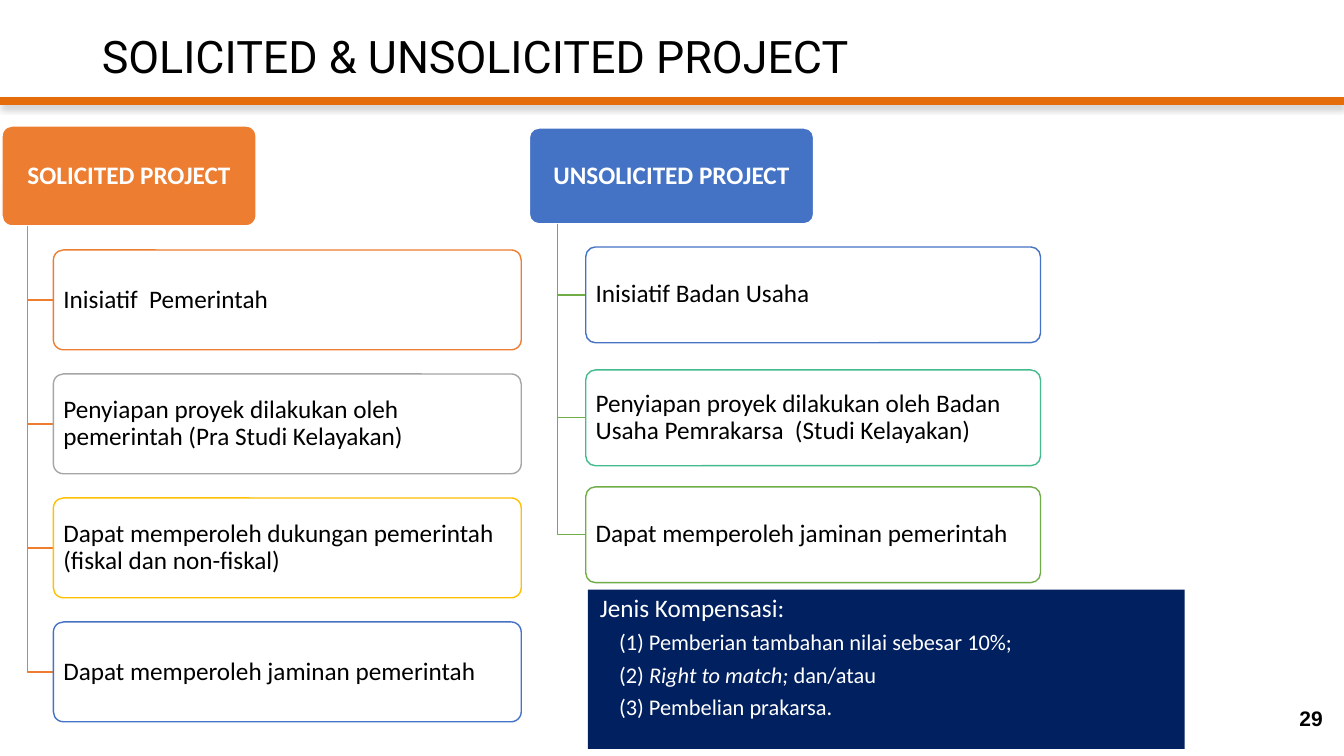
import pptx
import pptx.util
import pptx.dml.color
import pptx.enum.shapes
import pptx.enum.text
import pptx.oxml
import pptx.oxml.ns
from pptx.util import Inches

COLORS = {
    "black": "000000", "white": "FFFFFF", "rule": "E46C0A", "navy": "002060",
    "orange": "ED7D31", "gray": "A5A5A5", "gold": "FFC000", "blue": "4472C4",
    "teal": "43BB8D", "green": "70AD47",
}
SHAPES = pptx.enum.shapes.MSO_SHAPE
ALIGN = pptx.enum.text.PP_ALIGN
ANCHOR = pptx.enum.text.MSO_ANCHOR
NS = pptx.oxml.ns.nsdecls("a")
SHADOW = (
    f'<a:effectLst {NS}><a:outerShdw blurRad="{pptx.util.Pt(4)}" dist="{pptx.util.Pt(3)}" '
    'dir="5400000" rotWithShape="0"><a:srgbClr val="808080"><a:alpha val="40000"/>'
    '</a:srgbClr></a:outerShdw></a:effectLst>'
)


class Deck:
    def __init__(self, prs, font="Calibri", size=18):
        self.s = prs.slides.add_slide(prs.slide_layouts[1])
        self.font = font
        self.size = size

    def rgb(self, name):
        return pptx.dml.color.RGBColor.from_string(COLORS[name])

    def place(self, sp, left, top, width, height):
        sp.left, sp.top = Inches(left), Inches(top)
        sp.width, sp.height = Inches(width), Inches(height)

    def frame(self, sp, anchor, inset_x=0.12, inset_y=0.06):
        tf = sp.text_frame
        tf.word_wrap = True
        tf.auto_size = pptx.enum.text.MSO_AUTO_SIZE.NONE
        tf.vertical_anchor = anchor
        tf.margin_left = tf.margin_right = Inches(inset_x)
        tf.margin_top = tf.margin_bottom = Inches(inset_y)
        return tf

    def run(self, p, text, color, size=None, font=None, bold=False, italic=False):
        r = p.add_run()
        r.text = text
        r.font.name = font or self.font
        r.font.size = pptx.util.Pt(size or self.size)
        r.font.bold = bold
        r.font.italic = italic
        r.font.color.rgb = self.rgb(color)

    def title(self, text):
        sp = self.s.shapes.title
        self.place(sp, 0.89, 0, 12, 1.17)
        p = self.frame(sp, ANCHOR.MIDDLE).paragraphs[0]
        p.alignment = ALIGN.LEFT
        p.line_spacing = 0.9
        self.run(p, text, "black", 32, "Roboto")

    def rule(self, top):
        line = self.s.shapes.add_connector(
            pptx.enum.shapes.MSO_CONNECTOR.STRAIGHT,
            0, Inches(top), Inches(13.33), Inches(top))
        line.line.color.rgb = self.rgb("rule")
        line.line.width = pptx.util.Pt(6)
        line._element.spPr.append(pptx.oxml.parse_xml(SHADOW))

    def box(self, at, text, line, fill=None):
        sp = self.s.shapes.add_shape(SHAPES.ROUNDED_RECTANGLE, *map(Inches, at))
        sp.adjustments[0] = 0.1
        sp.shadow.inherit = False
        sp.fill.solid()
        sp.fill.fore_color.rgb = self.rgb(fill or "white")
        sp.line.color.rgb = self.rgb(line)
        sp.line.width = pptx.util.Pt(1)
        if not fill:
            color = sp._element.spPr.find(
                "/".join(map(pptx.oxml.ns.qn, ("a:solidFill", "a:srgbClr"))))
            color.append(pptx.oxml.parse_xml(f'<a:alpha {NS} val="90000"/>'))
        p = self.frame(sp, ANCHOR.MIDDLE, 0.07).paragraphs[0]
        p.alignment = ALIGN.CENTER if fill else ALIGN.LEFT
        p.line_spacing = 0.9
        self.run(p, text, "white" if fill else "black", bold=bool(fill))

    def elbow(self, x, top, bottom, right, color):
        builder = self.s.shapes.build_freeform(Inches(x), Inches(top))
        builder.add_line_segments(
            [(Inches(x), Inches(bottom)), (Inches(right), Inches(bottom))], close=False)
        sp = builder.convert_to_shape()
        sp.shadow.inherit = False
        sp.fill.background()
        sp.line.color.rgb = self.rgb(color)
        sp.line.width = pptx.util.Pt(1)

    def branch(self, heading, head_at, head_color, trunk_color, left, width, items):
        head_left, head_top, head_width, height = head_at
        self.box(head_at, heading, "white", head_color)
        trunk = head_left + head_width / 10
        for top, text, color in items:
            self.elbow(trunk, head_top + height, top + height / 2, left, trunk_color)
            self.box((left, top, width, height), text, color)

    def body(self, at, heading, items):
        sp = self.s.placeholders[1]
        self.place(sp, *at)
        sp.fill.solid()
        sp.fill.fore_color.rgb = self.rgb("navy")
        tf = self.frame(sp, ANCHOR.TOP)
        for i, runs in enumerate([[(heading, False)]] + items):
            p = tf.add_paragraph() if i else tf.paragraphs[0]
            p.line_spacing = 0.9
            p.space_before = pptx.util.Pt(0)
            p.space_after = pptx.util.Pt(6)
            pPr = p._p.get_or_add_pPr()
            pPr.set("marL", str(Inches(0.19 if i else 0)))
            pPr.set("indent", "0")
            pPr.append(pptx.oxml.parse_xml(f"<a:buNone {NS}/>"))
            for text, italic in runs:
                self.run(p, text, "white", 16 if i else 18, italic=italic)

    def number(self, text):
        sp = self.s.shapes.add_textbox(*map(Inches, (10.13, 6.92, 3.11, 0.4)))
        p = self.frame(sp, ANCHOR.MIDDLE).paragraphs[0]
        p.alignment = ALIGN.RIGHT
        self.run(p, text, "black", 15, "Arial", bold=True)


def main():
    prs = pptx.Presentation()
    prs.slide_width, prs.slide_height = Inches(13.33), Inches(7.5)
    deck = Deck(prs)
    deck.rule(1)
    solicited = [
        ("Inisiatif  Pemerintah", "orange"),
        ("Penyiapan proyek dilakukan oleh pemerintah (Pra Studi Kelayakan)", "gray"),
        ("Dapat memperoleh dukungan pemerintah (fiskal dan non-fiskal)", "gold"),
        ("Dapat memperoleh jaminan pemerintah", "blue"),
    ]
    deck.branch("SOLICITED PROJECT", (0.02, 1.25, 2.52, 0.99), "orange", "orange", 0.53, 4.64,
                [(2.48 + 1.23 * i, *item) for i, item in enumerate(solicited)])
    deck.branch("UNSOLICITED PROJECT", (5.25, 1.27, 2.82, 0.95), "blue", "green", 5.81, 4.51, [
        (2.45, "Inisiatif Badan Usaha", "blue"),
        (3.67, "Penyiapan proyek dilakukan oleh Badan Usaha Pemrakarsa  (Studi Kelayakan)", "teal"),
        (4.83, "Dapat memperoleh jaminan pemerintah", "green"),
    ])
    deck.body((5.83, 5.85, 5.92, 1.58), "Jenis Kompensasi:", [
        [("(1) Pemberian tambahan nilai sebesar 10%;", False)],
        [("(2) ", False), ("Right to match; ", True), ("dan/atau", False)],
        [("(3) Pembelian prakarsa.", False)],
    ])
    deck.title("SOLICITED & UNSOLICITED PROJECT")
    deck.number("29")
    prs.save("out.pptx")


if __name__ == "__main__":
    main()
